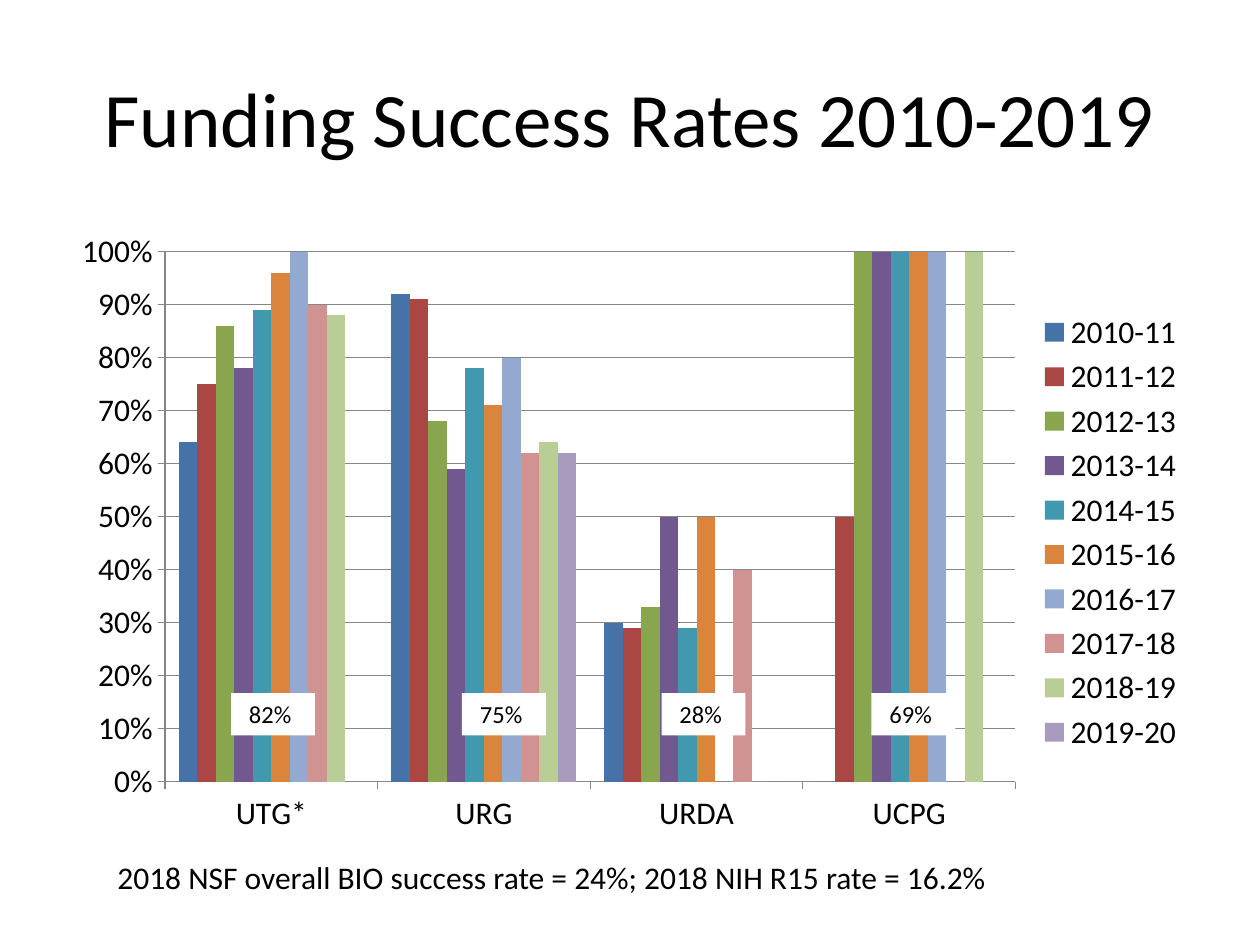
from pptx import Presentation
from pptx.chart.data import CategoryChartData
from pptx.dml.color import RGBColor
from pptx.enum.chart import XL_CHART_TYPE as ChartType, XL_LEGEND_POSITION as LegendPosition
from pptx.enum.chart import XL_TICK_MARK as TickMark
from pptx.enum.shapes import MSO_SHAPE as Shape
from pptx.enum.text import MSO_ANCHOR as Anchor, PP_ALIGN as Align
from pptx.oxml import parse_xml
from pptx.util import Pt

BLACK = RGBColor(0x00, 0x00, 0x00)
WHITE = RGBColor(0xFF, 0xFF, 0xFF)
GRID_GRAY = RGBColor(0x86, 0x86, 0x86)
YEAR_COLORS = [RGBColor.from_string(code) for code in (
    "4572A7", "AA4643", "89A54E", "71588F", "4198AF",
    "DB843D", "93A9CF", "D19392", "B9CD96", "A99BBD")]

CHART_NS = "http://schemas.openxmlformats.org/drawingml/2006/chart"
PLOT_FRAME = {"x": 0.09, "y": 0.05, "w": 0.75, "h": 0.85}

GRANTS = ["UTG*", "URG", "URDA", "UCPG"]
RATES = {
    "2010-11": (0.64, 0.92, 0.3, 0),
    "2011-12": (0.75, 0.91, 0.29, 0.5),
    "2012-13": (0.86, 0.68, 0.33, 1),
    "2013-14": (0.78, 0.59, 0.5, 1),
    "2014-15": (0.89, 0.78, 0.29, 1),
    "2015-16": (0.96, 0.71, 0.5, 1),
    "2016-17": (1, 0.8, 0, 1),
    "2017-18": (0.9, 0.62, 0.4, 0),
    "2018-19": (0.88, 0.64, 0, 1),
    "2019-20": (None, 0.62, 0, 0),
}
# Average rate and left edge of its label
AVERAGES = {" 82%": 132, " 75%": 264, " 28%": 378, " 69%": 498}


class SlideBuilder:
    font_name = "Calibri"

    def __init__(self, slide):
        self.slide = slide

    def style_font(self, font, size):
        for name, value in {"name": self.font_name, "size": Pt(size), "bold": False}.items():
            setattr(font, name, value)
        font.color.rgb = BLACK

    def set_text(self, shape, text, size, align=Align.LEFT, anchor=Anchor.TOP):
        frame = shape.text_frame
        frame.word_wrap = True
        frame.vertical_anchor = anchor
        paragraph = frame.paragraphs[0]
        paragraph.alignment = align
        run = paragraph.add_run()
        run.text = text
        self.style_font(run.font, size)

    def title(self, text, left, top, width, height):
        heading = self.slide.shapes.title
        box = {"left": left, "top": top, "width": width, "height": height}
        for name, value in box.items():
            setattr(heading, name, Pt(value))
        self.set_text(heading, text, 44, Align.CENTER, Anchor.MIDDLE)

    def label(self, text, left, top, width, height):
        tag = self.slide.shapes.add_shape(
            Shape.RECTANGLE, Pt(left), Pt(top), Pt(width), Pt(height))
        tag.shadow.inherit = False
        tag.fill.solid()
        tag.fill.fore_color.rgb = WHITE
        tag.line.fill.background()
        self.set_text(tag, text, 14)

    def note(self, text, left, top, width, height):
        footnote = self.slide.shapes.add_textbox(Pt(left), Pt(top), Pt(width), Pt(height))
        self.set_text(footnote, text, 18)

    def column_chart(self, categories, series, left, top, width, height):
        data = CategoryChartData(number_format="0%")
        data.categories = categories
        for name, values in series.items():
            data.add_series(name, values)
        chart = self.slide.shapes.add_chart(
            ChartType.COLUMN_CLUSTERED, Pt(left), Pt(top), Pt(width), Pt(height), data).chart
        chart.has_title = False
        self.style_font(chart.font, 18)

        # Columns
        columns = chart.plots[0]
        columns.gap_width = 150
        columns.overlap = 0
        columns.vary_by_categories = False
        for year, color in zip(columns.series, YEAR_COLORS):
            year.invert_if_negative = False
            year.format.fill.solid()
            year.format.fill.fore_color.rgb = color

        # Axes and legend
        grants, rates = chart.category_axis, chart.value_axis
        for name, value in {"minimum_scale": 0, "maximum_scale": 1, "major_unit": 0.1,
                            "has_major_gridlines": True}.items():
            setattr(rates, name, value)
        rates.tick_labels.number_format = "0%"
        rates.tick_labels.number_format_is_linked = False
        for axis in (grants, rates):
            axis.major_tick_mark = TickMark.OUTSIDE
        for part in (grants, rates, rates.major_gridlines):
            part.format.line.color.rgb = GRID_GRAY
            part.format.line.width = Pt(0.75)
        chart.has_legend = True
        chart.legend.position = LegendPosition.RIGHT
        chart.legend.include_in_layout = False
        self.place_plot(chart)

    def place_plot(self, chart):
        area = chart.plots[0]._element.getparent()
        for layout in area.findall(f"{{{CHART_NS}}}layout"):
            area.remove(layout)
        modes = "".join(f'<c:{axis}Mode val="edge"/>' for axis in "xy")
        sizes = "".join(f'<c:{side} val="{value}"/>' for side, value in PLOT_FRAME.items())
        area.insert(0, parse_xml(
            f'<c:layout xmlns:c="{CHART_NS}"><c:manualLayout>'
            f'<c:layoutTarget val="inner"/>{modes}{sizes}</c:manualLayout></c:layout>'))


def main():
    deck = Presentation()
    deck.slide_width, deck.slide_height = Pt(720), Pt(540)
    builder = SlideBuilder(deck.slides.add_slide(deck.slide_layouts[5]))

    builder.title("Funding Success Rates 2010-2019", 36, 21.6, 648, 90)
    builder.column_chart(GRANTS, RATES, 36, 126, 648, 356.4)
    for average, left in AVERAGES.items():
        builder.label(average, left, 396, 48, 24.3)
    builder.note("2018 NSF overall BIO success rate = 24%; 2018 NIH R15 rate = 16.2%",
                 60, 486.7, 594, 29)

    deck.save("out.pptx")


if __name__ == "__main__":
    main()
